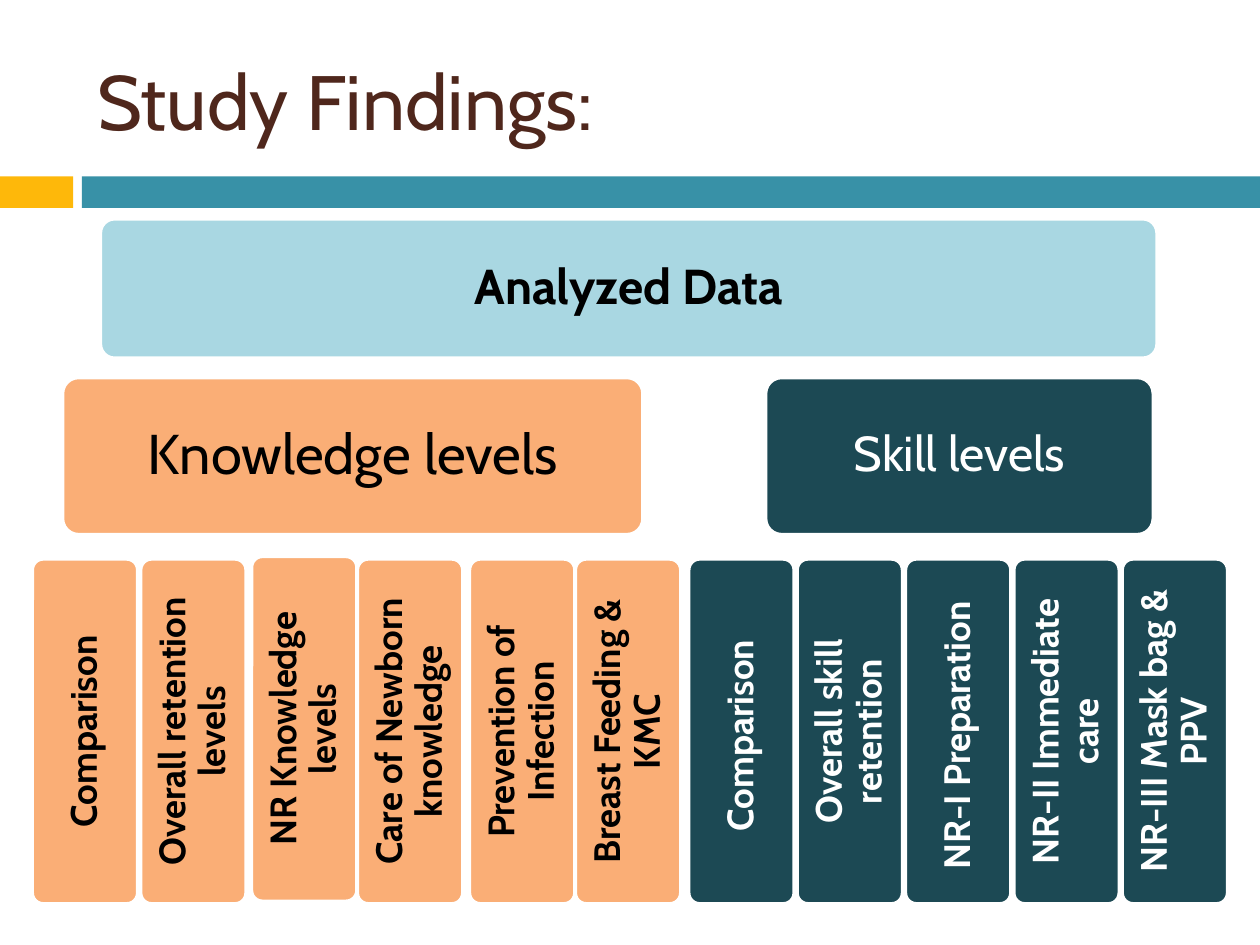
from pptx import Presentation
from pptx.dml.color import RGBColor
from pptx.enum.shapes import MSO_SHAPE
from pptx.enum.text import MSO_ANCHOR, PP_ALIGN
from pptx.util import Inches, Pt

RECTANGLE = MSO_SHAPE.RECTANGLE
ROUNDED = MSO_SHAPE.ROUNDED_RECTANGLE
MIDDLE = MSO_ANCHOR.MIDDLE
LEFT = PP_ALIGN.LEFT
CENTER = PP_ALIGN.CENTER

BLACK = RGBColor(0x00, 0x00, 0x00)
WHITE = RGBColor(0xFF, 0xFF, 0xFF)
BROWN = RGBColor(0x4F, 0x27, 0x1C)
YELLOW = RGBColor(0xFE, 0xB8, 0x0A)
TEAL = RGBColor(0x38, 0x91, 0xA7)
PALE_BLUE = RGBColor(0xA9, 0xD7, 0xE2)
ORANGE = RGBColor(0xFA, 0xAE, 0x76)
DARK_TEAL = RGBColor(0x1C, 0x49, 0x54)
FONT = "Cabin"


def format_text(shape, text, size, color, bold, alignment):
    text_frame = shape.text_frame
    text_frame.text = text
    text_frame.word_wrap = True
    text_frame.vertical_anchor = MIDDLE
    paragraph = text_frame.paragraphs[0]
    paragraph.alignment = alignment
    font = paragraph.runs[0].font
    font.name = FONT
    font.size = Pt(size)
    font.bold = bold
    font.color.rgb = color


def add_box(left, top, width, height, text, fill, color, size, bold, inset):
    box = slide.shapes.add_shape(
        ROUNDED, Inches(left), Inches(top), Inches(width), Inches(height))
    box.shadow.inherit = False
    box.adjustments[0] = 0.1
    box.fill.solid()
    box.fill.fore_color.rgb = fill
    box.line.color.rgb = WHITE
    box.line.width = Pt(1.5)
    format_text(box, text, size, color, bold, CENTER)
    text_frame = box.text_frame
    text_frame.margin_left = text_frame.margin_right = Inches(inset)
    text_frame.margin_top = text_frame.margin_bottom = Inches(inset)
    text_frame.paragraphs[0].line_spacing = 0.9
    return box


presentation = Presentation()
presentation.slide_width = Inches(10)
presentation.slide_height = Inches(7.5)
slide = presentation.slides.add_slide(presentation.slide_layouts[5])

for left, width, color in [(0, 0.58, YELLOW), (0.65, 9.35, TEAL)]:
    band = slide.shapes.add_shape(
        RECTANGLE, Inches(left), Inches(1.4), Inches(width), Inches(0.25))
    band.shadow.inherit = False
    band.fill.solid()
    band.fill.fore_color.rgb = color
    band.line.fill.background()

title = slide.shapes.title
title.left, title.top = Inches(0.67), Inches(0.25)
title.width, title.height = Inches(8.92), Inches(1.08)
format_text(title, "Study Findings:", 44, BROWN, False, LEFT)

add_box(0.8, 1.74, 8.38, 1.1, "Analyzed Data", PALE_BLUE, BLACK, 28, True, 0.12)
add_box(0.5, 3, 4.6, 1.24, "Knowledge levels", ORANGE, BLACK, 32, False, 0.13)
add_box(6.08, 3, 3.07, 1.24, "Skill levels", DARK_TEAL, WHITE, 28, False, 0.12)

knowledge_topics = [
    (0.26, 4.44, "Comparison"),
    (1.12, 4.44, "Overall retention levels"),
    (2, 4.42, "NR Knowledge levels"),
    (2.84, 4.44, "Care of Newborn knowledge"),
    (3.73, 4.44, "Prevention of Infection"),
    (4.57, 4.44, "Breast Feeding & KMC"),
]
skill_topics = [
    (5.47 + 0.86 * index, 4.44, text)
    for index, text in enumerate([
        "Comparison ",
        "Overall skill retention",
        "NR-I Preparation ",
        "NR-II Immediate care",
        "NR-III Mask bag & PPV",
    ])
]
for topics, fill, color in [
    (knowledge_topics, ORANGE, BLACK),
    (skill_topics, DARK_TEAL, WHITE),
]:
    for left, top, text in topics:
        topic = add_box(left, top, 0.83, 2.73, text, fill, color, 21, True, 0.09)
        topic.element.txBody.bodyPr.set("vert", "vert270")

presentation.save("out.pptx")
